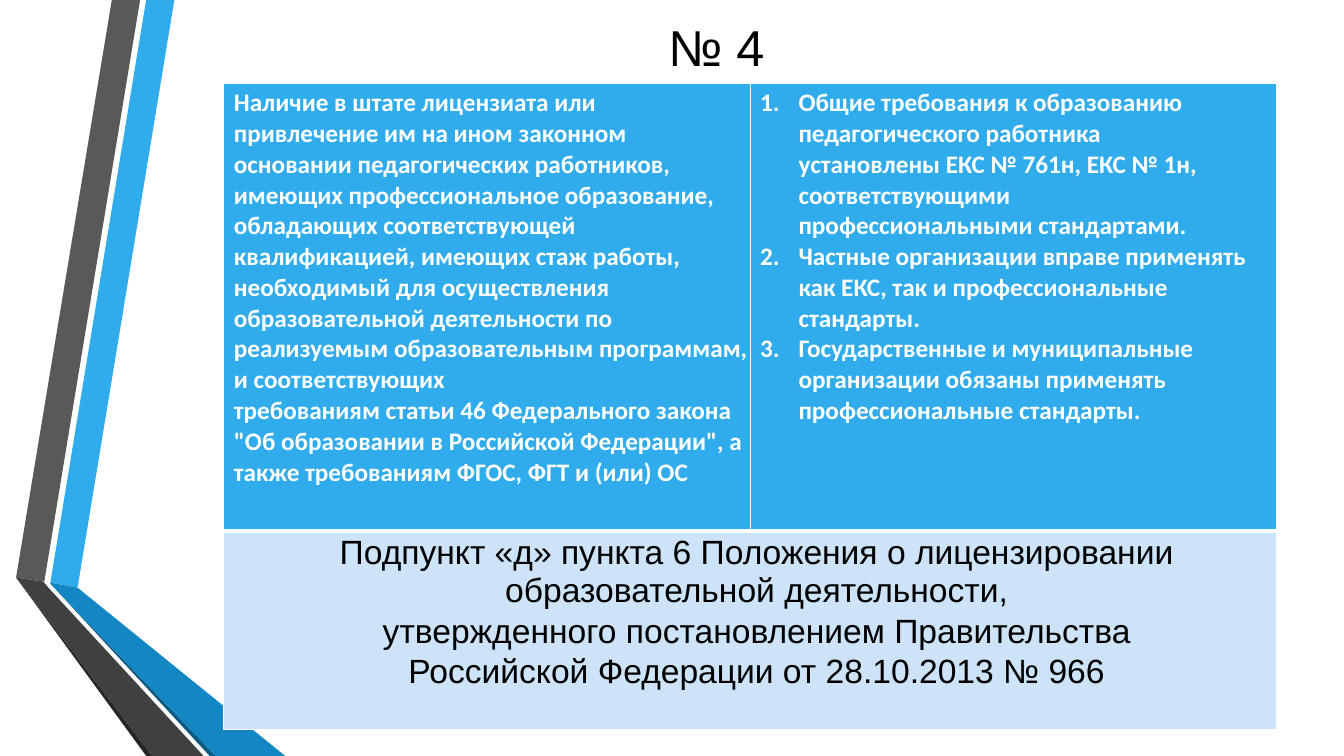
from dataclasses import dataclass
from typing import Any, Optional

from lxml.etree import SubElement
from pptx import Presentation
from pptx.dml.color import RGBColor as Rgb
from pptx.enum.text import MSO_ANCHOR as Anchor, PP_ALIGN as Align
from pptx.oxml.ns import qn
from pptx.util import Inches, Pt


@dataclass(frozen=True)
class Theme:
    white: str = "FFFFFF"
    black: str = "000000"
    blue: str = "30ACEC"
    pale_blue: str = "CDE3F8"
    heading_font: str = "Arial"
    body_font: str = "Calibri"
    title_size: int = 36
    source_size: int = 24
    body_size: int = 18
    thin_line: float = 1
    thick_line: float = 3


THEME = Theme()


@dataclass(frozen=True)
class Ribbon:
    color: str
    points: tuple[tuple[float, float], ...]


@dataclass(frozen=True)
class Line:
    text: str
    left: float = 0.1
    before: float = 0
    number: Optional[int] = None
    align: Align = Align.LEFT


@dataclass(frozen=True)
class TextStyle:
    color: str
    font: dict[str, Any]


TITLE = TextStyle(THEME.black, {"name": THEME.heading_font, "size": Pt(THEME.title_size), "bold": False})
BODY = TextStyle(THEME.white, {"name": THEME.body_font, "size": Pt(THEME.body_size), "bold": True})
SOURCE = TextStyle(THEME.black, {"name": THEME.heading_font, "size": Pt(THEME.source_size), "bold": False})

RIBBONS = (
    Ribbon(THEME.blue, ((0.5, 5.78), (0.77, 5.83), (1.73, 0), (1.45, 0))),
    Ribbon("595959", ((1.39, 0), (1.11, 0), (0.16, 5.73), (0.44, 5.77))),
    Ribbon("262626", ((0.16, 5.73), (1.45, 7.5), (1.51, 7.5))),
    Ribbon("0C5A82", ((0.5, 5.79), (2.08, 7.5), (2.14, 7.5))),
    Ribbon("1287C3", ((0.5, 5.79), (2.14, 7.5), (2.83, 7.5), (0.77, 5.83), (0.5, 5.78))),
    Ribbon("404040", ((2.02, 7.5), (0.48, 5.83), (0.43, 5.77), (0.16, 5.73), (1.51, 7.5))),
)

HANG = 0.38
ITEM = 0.48

REQUIREMENT = (
    Line("Наличие в штате лицензиата или", before=2.6),
    Line("привлечение им на ином законном основании педагогических работников,", before=0.1),
    Line("имеющих профессиональное образование, обладающих соответствующей"),
    Line("квалификацией, имеющих стаж работы, необходимый для осуществления "
         "образовательной деятельности по"),
    Line("реализуемым образовательным программам, и соответствующих"),
    Line("требованиям статьи 46 Федерального закона \"Об образовании в Российской "
         "Федерации\", а также требованиям ФГОС, ФГТ и (или) ОС", before=0.1),
)
EXPLANATION = (
    Line("Общие требования к образованию педагогического работника", ITEM, 2.6, 1),
    Line("установлены ЕКС № 761н, ЕКС № 1н, соответствующими", ITEM, 0.1),
    Line("профессиональными стандартами.", ITEM),
    Line("Частные организации вправе применять как ЕКС, так и профессиональные стандарты.",
         ITEM, number=2),
    Line("Государственные и муниципальные организации обязаны применять", ITEM, number=2),
    Line("профессиональные стандарты.", ITEM, 0.1),
)
LEGAL_SOURCE = tuple(
    Line(text, 0.13, 2.5, align=Align.CENTER)
    for text in (
        "Подпункт «д» пункта 6 Положения о лицензировании образовательной деятельности,",
        "утвержденного постановлением Правительства",
        "Российской Федерации от 28.10.2013 № 966",
    )
)


def draw_ribbon(slide: Any, ribbon: Ribbon) -> None:
    first, *rest = [(Inches(x), Inches(y)) for x, y in ribbon.points]
    outline = slide.shapes.build_freeform(*first, scale=1.0)
    outline.add_line_segments(rest, close=True)
    band = outline.convert_to_shape()
    band.shadow.inherit = False
    band.fill.solid()
    band.fill.fore_color.rgb = Rgb.from_string(ribbon.color)
    band.line.fill.background()


def write_lines(frame: Any, lines: tuple[Line, ...], style: TextStyle) -> None:
    frame.word_wrap = True
    for index, line in enumerate(lines):
        paragraph = frame.add_paragraph() if index else frame.paragraphs[0]
        paragraph.alignment = line.align
        paragraph.space_before = Pt(line.before)
        run = paragraph.add_run()
        run.text = line.text
        for name, value in style.font.items():
            setattr(run.font, name, value)
        run.font.color.rgb = Rgb.from_string(style.color)
        # Indents and numbering
        props = paragraph._p.get_or_add_pPr()
        props.set("marL", str(Inches(line.left)))
        props.set("indent", str(Inches(-HANG if line.number else 0)))
        if line.number:
            SubElement(props, qn("a:buAutoNum"), type="arabicPeriod", startAt=str(line.number))


def fill_cell(cell: Any, lines: tuple[Line, ...], style: TextStyle,
              color: str, top: float, bottom_line: float) -> None:
    margins = {"margin_left": 0, "margin_right": 0, "margin_bottom": 0, "margin_top": Inches(top)}
    for name, value in margins.items():
        setattr(cell, name, value)
    cell.vertical_anchor = Anchor.TOP
    write_lines(cell.text_frame, lines, style)
    # Borders come before the fill in the cell properties
    props = cell._tc.get_or_add_tcPr()
    for side in "LRTB":
        width = bottom_line if side == "B" else THEME.thin_line
        border = SubElement(props, qn(f"a:ln{side}"), w=str(Pt(width)))
        SubElement(SubElement(border, qn("a:solidFill")), qn("a:srgbClr"), val=THEME.white)
    cell.fill.solid()
    cell.fill.fore_color.rgb = Rgb.from_string(color)


def draw_title(slide: Any) -> None:
    title = slide.shapes.add_textbox(Inches(1.62), Inches(0.09), Inches(10.96), Inches(0.74))
    title.text_frame.vertical_anchor = Anchor.MIDDLE
    write_lines(title.text_frame, (Line("№ 4", 0.01, 1.1, align=Align.CENTER),), TITLE)


def draw_requirements(slide: Any) -> None:
    table = slide.shapes.add_table(
        2, 2, Inches(2.22), Inches(0.83), Inches(10.44), Inches(6.41)).table
    table.first_row = table.horz_banding = False
    for row, height in zip(table.rows, (4.44, 1.97)):
        row.height = Inches(height)
    for column, lines in enumerate((REQUIREMENT, EXPLANATION)):
        fill_cell(table.cell(0, column), lines, BODY, THEME.blue, 0.04, THEME.thick_line)
    legal_source = table.cell(1, 0)
    legal_source.merge(table.cell(1, 1))
    fill_cell(legal_source, LEGAL_SOURCE, SOURCE, THEME.pale_blue, 0.03, THEME.thin_line)


def main() -> None:
    deck = Presentation()
    deck.slide_width, deck.slide_height = Inches(13.33), Inches(7.5)
    slide = deck.slides.add_slide(deck.slide_layouts[6])
    # Folded ribbons on the left
    for ribbon in RIBBONS:
        draw_ribbon(slide, ribbon)
    # Heading and requirement table
    draw_title(slide)
    draw_requirements(slide)
    deck.save("out.pptx")


if __name__ == "__main__":
    main()
